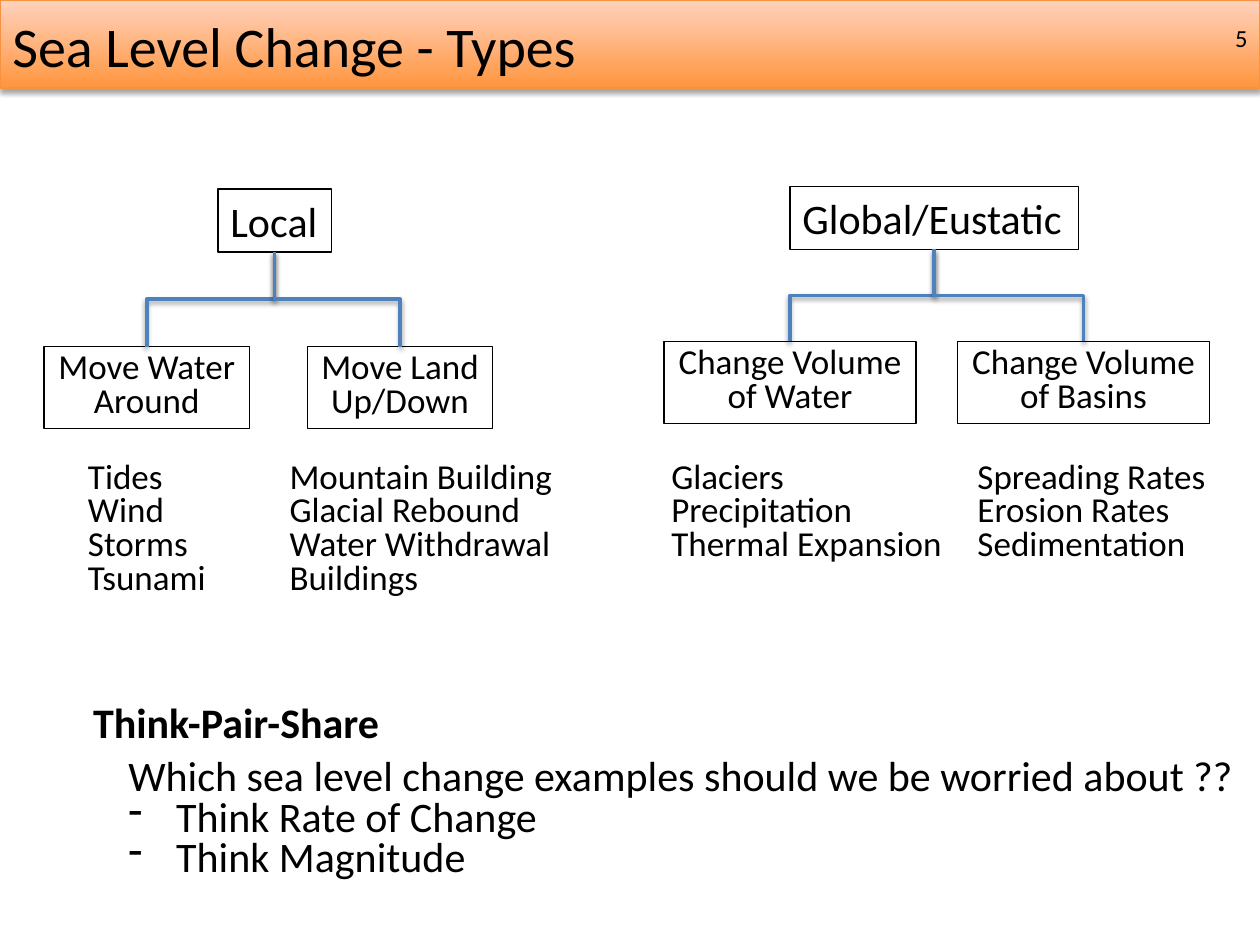
from lxml.etree import SubElement as Sub
from pptx import Presentation
from pptx.dml.color import RGBColor
from pptx.enum.shapes import MSO_CONNECTOR as Link, MSO_SHAPE as Shape
from pptx.enum.text import MSO_ANCHOR as Anchor, MSO_AUTO_SIZE as Fit, PP_ALIGN as Align
from pptx.oxml.ns import qn
from pptx.util import Inches, Pt

BLACK = RGBColor(0, 0, 0)
BLUE = RGBColor(0x4F, 0x81, 0xBD)
EDGE = RGBColor(0xF6, 0x92, 0x40)
DEEP = RGBColor(0xFF, 0x95, 0x3E)
PALE = RGBColor(0xFF, 0xD2, 0xBD)
FONT = "Calibri"
WIDE, HIGH = 10, 7.5

# Content: each tree has a root (text, left, top, width), the top of its
# branches, and branches (label, left, width, examples, left, width)
TREES = [
    (("Local", 1.73, 1.5, 0.9), 2.75, [
        (["Move Water", "Around"], 0.35, 1.63,
         ["Tides", "Wind", "Storms", "Tsunami"], 0.6, 1.17),
        (["Move Land", "Up/Down"], 2.44, 1.47,
         ["Mountain Building", "Glacial Rebound", "Water Withdrawal",
          "Buildings"], 2.2, 2.3),
    ]),
    (("Global/Eustatic", 6.27, 1.48, 2.29), 2.71, [
        (["Change Volume", "of Water"], 5.27, 2,
         ["Glaciers", "Precipitation", "Thermal Expansion"], 5.23, 2.37),
        (["Change Volume", "of Basins"], 7.6, 2,
         ["Spreading Rates", "Erosion Rates", "Sedimentation"], 7.66, 2.03),
    ]),
]
TITLE = "Sea Level Change - Types"
PAGE = "5"
TASK = "Think-Pair-Share"
ASK = "Which sea level change examples should we be worried about ??"
HINTS = ["Think Rate of Change", "Think Magnitude"]
ROOT_H, LABEL_H, LIST_Y = 0.5, 0.65, 3.62

prs = Presentation()
prs.slide_width, prs.slide_height = Inches(WIDE), Inches(HIGH)
shapes = prs.slides.add_slide(prs.slide_layouts[6]).shapes


def write(lines, x, y, w, h, size, frame=False, align=Align.LEFT, gap=None,
          bold=None, wrap=False, dashed=()):
    at = [Inches(v) for v in (x, y, w, h)]
    if frame:
        box = shapes.add_shape(Shape.RECTANGLE, *at)
        box.fill.background()
        box.line.color.rgb = BLACK
        box.line.width = Pt(0.75)
        box.shadow.inherit = False
    else:
        box = shapes.add_textbox(*at)
    text = box.text_frame
    text.word_wrap = wrap
    text.auto_size = Fit.NONE if wrap else Fit.SHAPE_TO_FIT_TEXT
    text.vertical_anchor = Anchor.MIDDLE if wrap else Anchor.TOP
    for i, line in enumerate(lines):
        para = text.add_paragraph() if i else text.paragraphs[0]
        para.text = line
        para.alignment = align
        para.line_spacing = gap
        if line in dashed:
            props = para._p.get_or_add_pPr()
            props.set("marL", str(Inches(0.38)))
            props.set("indent", str(-Inches(0.38)))
            Sub(props, qn("a:buChar")).set("char", "-")
        font = para.font
        font.name, font.size, font.bold = FONT, Pt(size), bold
        font.color.rgb = BLACK


def shade(holder, blur, dist, alpha):
    shadow = Sub(holder, qn("a:outerShdw"), blurRad=str(Pt(blur)),
                 dist=str(Pt(dist)), dir="5400000", rotWithShape="0")
    color = Sub(shadow, qn("a:srgbClr"), val=str(BLACK))
    Sub(color, qn("a:alpha"), val=str(alpha * 1000))


def join(x1, y1, x2, y2):
    """Elbow that leaves downwards: a turned box around the middle point."""
    w, h = y2 - y1, abs(x2 - x1)
    x, y = (x1 + x2 - w) / 2, (y1 + y2 - h) / 2
    link = shapes.add_connector(
        Link.ELBOW, *[Inches(v) for v in (x, y, x + w, y + h)])
    link.line.color.rgb = BLUE
    link.line.width = Pt(2)
    props = link._element.spPr
    turn = props.find(qn("a:xfrm"))
    right = x2 > x1
    turn.set("rot", str((270 if right else 90) * 60000))
    if right:
        turn.set("flipH", "1")
    shade(Sub(props, qn("a:effectLst")), 3.1, 1.6, 38)


# Title bar
bar = shapes.add_shape(Shape.RECTANGLE, 0, 0, Inches(WIDE), Inches(0.7))
bar.fill.gradient()
bar.fill.gradient_angle = 90
for stop, color in zip(bar.fill.gradient_stops, (DEEP, PALE)):
    stop.color.rgb = color
bar.line.color.rgb = EDGE
bar.line.width = Pt(0.75)
bar.shadow.inherit = False
shade(bar._element.spPr.find(qn("a:effectLst")), 3.1, 1.8, 35)
write([TITLE], 0, 0.04, 4.75, 0.64, 32)
write([PAGE], 7.67, 0.1, 2.33, 0.4, 14, align=Align.RIGHT, wrap=True)

# Trees with their examples
for (root, x, y, w), low, kids in TREES:
    write([root], x, y, w, ROOT_H, 24, frame=True)
    for label, left, wide, items, list_x, list_w in kids:
        write(label, left, low, wide, LABEL_H, 20, frame=True,
              align=Align.CENTER, gap=0.8)
        write(items, list_x, LIST_Y, list_w, 0.12 + 0.27 * len(items), 20,
              gap=0.8)
        join(x + w / 2, y + ROOT_H, left + wide / 2, low)

# Discussion task
write([TASK], 0.64, 5.48, 2.52, 0.5, 24, bold=True)
write([ASK, *HINTS], 0.92, 5.98, 9.08, 1.08, 24, gap=0.8, dashed=HINTS)

prs.save("out.pptx")
